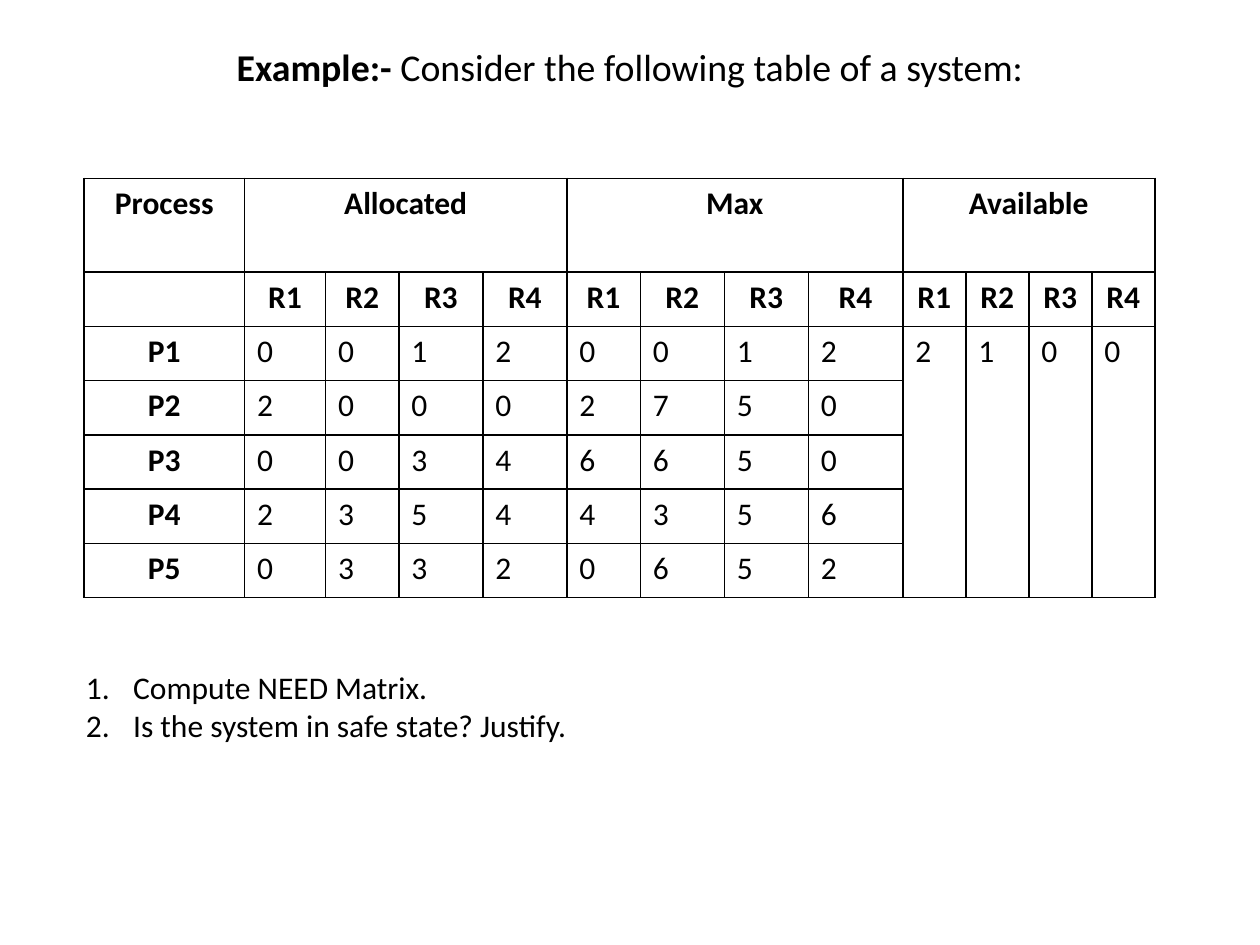
import pptx
import pptx.dml.color
import pptx.enum.text
import pptx.util
import lxml.etree
from pptx.oxml.ns import qn

Pt = pptx.util.Pt
CENTER = pptx.enum.text.PP_ALIGN.CENTER
LEFT = pptx.enum.text.PP_ALIGN.LEFT

COLORS = {"ink": "000000"}
FONT = "Calibri"

TITLE = [("Example:- ", True), ("Consider the following table of a system:", False)]
GROUPS = ["Allocated", "Max", "Available"]
RESOURCES = ["R1", "R2", "R3", "R4"]
PROCESSES = {
    "P1": ([0, 0, 1, 2], [0, 0, 1, 2]),
    "P2": ([2, 0, 0, 0], [2, 7, 5, 0]),
    "P3": ([0, 0, 3, 4], [6, 6, 5, 0]),
    "P4": ([2, 3, 5, 4], [4, 3, 5, 6]),
    "P5": ([0, 3, 3, 2], [0, 6, 5, 2]),
}
AVAILABLE = [2, 1, 0, 0]
QUESTIONS = ["Compute NEED Matrix.", "Is the system in safe state? Justify."]

COLUMN_WIDTHS = [91.8, 46.2, 42, 48, 48, 42, 48, 48, 54] + [36] * 4
ROW_HEIGHTS = [53.6] + [31] * 6


def add_text(para, text, size=18, bold=False, align=LEFT):
    para.alignment = align
    span = para.add_run()
    span.text = str(text)
    span.font.name = FONT
    span.font.size = Pt(size)
    span.font.bold = bold
    span.font.color.rgb = pptx.dml.color.RGBColor.from_string(COLORS["ink"])


def add_box(page, left, top, width, height):
    frame = page.shapes.add_textbox(Pt(left), Pt(top), Pt(width), Pt(height)).text_frame
    frame.word_wrap = True
    frame.vertical_anchor = pptx.enum.text.MSO_ANCHOR.TOP
    return frame


def style_cell(cell):
    cell.fill.background()
    properties = cell._tc.get_or_add_tcPr()
    for position, side in enumerate(("lnL", "lnR", "lnT", "lnB")):
        line = lxml.etree.Element(qn(f"a:{side}"), w=str(Pt(1)))
        fill = lxml.etree.SubElement(line, qn("a:solidFill"))
        lxml.etree.SubElement(fill, qn("a:srgbClr"), val=COLORS["ink"])
        properties.insert(position, line)


def number_paragraph(para):
    properties = para._p.get_or_add_pPr()
    properties.set("marL", str(Pt(27)))
    properties.set("indent", str(-Pt(27)))
    lxml.etree.SubElement(properties, qn("a:buFont"), typeface="+mj-lt")
    lxml.etree.SubElement(properties, qn("a:buAutoNum"), type="arabicPeriod")


def add_matrix(page):
    rows, columns = len(ROW_HEIGHTS), len(COLUMN_WIDTHS)
    frame = page.shapes.add_table(
        rows, columns, Pt(48), Pt(102), Pt(sum(COLUMN_WIDTHS)), Pt(sum(ROW_HEIGHTS))
    )
    table = frame.table
    table.first_row = False
    table.horz_banding = False
    for column, width in zip(table.columns, COLUMN_WIDTHS):
        column.width = Pt(width)
    for row, height in zip(table.rows, ROW_HEIGHTS):
        row.height = Pt(height)
    for cell in table.iter_cells():
        style_cell(cell)

    def write(row, column, text, heading=False):
        para = table.cell(row, column).text_frame.paragraphs[0]
        add_text(para, text, bold=heading, align=CENTER if heading else LEFT)

    write(0, 0, "Process", heading=True)
    for index, group in enumerate(GROUPS):
        first = 1 + index * len(RESOURCES)
        table.cell(0, first).merge(table.cell(0, first + len(RESOURCES) - 1))
        write(0, first, group, heading=True)
        for offset, resource in enumerate(RESOURCES):
            write(1, first + offset, resource, heading=True)
    for row, (process, (allocated, maximum)) in enumerate(PROCESSES.items(), 2):
        write(row, 0, process, heading=True)
        for column, value in enumerate(allocated + maximum, 1):
            write(row, column, value)
    for column, value in enumerate(AVAILABLE, columns - len(AVAILABLE)):
        table.cell(2, column).merge(table.cell(rows - 1, column))
        write(2, column, value)


def main():
    deck = pptx.Presentation()
    deck.slide_width, deck.slide_height = Pt(720), Pt(540)
    page = deck.slides.add_slide(deck.slide_layouts[6])

    title = add_box(page, 36, 21.6, 648, 56)
    for text, bold in TITLE:
        add_text(title.paragraphs[0], text, size=21.6, bold=bold, align=CENTER)

    add_matrix(page)

    questions = add_box(page, 42, 378, 636, 51)
    for index, question in enumerate(QUESTIONS):
        para = questions.add_paragraph() if index else questions.paragraphs[0]
        add_text(para, question)
        number_paragraph(para)

    deck.save("out.pptx")


if __name__ == "__main__":
    main()
